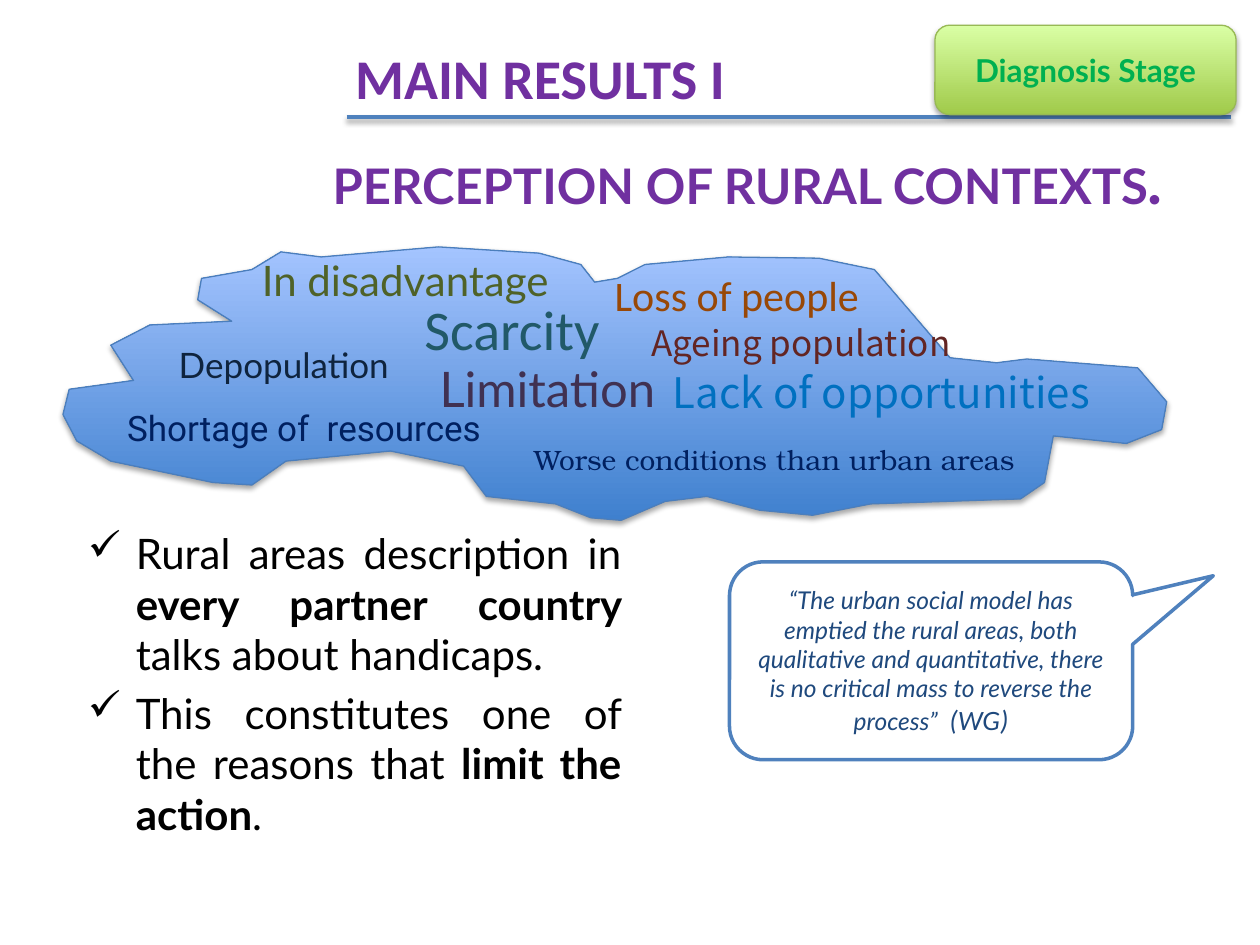
"""Build the rural perception slide with its word cloud, findings and quotation."""
from dataclasses import dataclass, field
from typing import Any

from lxml import etree
from pptx import Presentation
from pptx.dml.color import RGBColor
from pptx.enum.shapes import MSO_CONNECTOR, MSO_SHAPE
from pptx.enum.text import MSO_ANCHOR, MSO_AUTO_SIZE, PP_ALIGN
from pptx.oxml.ns import qn
from pptx.util import Inches, Pt

LEFT, CENTER, JUSTIFY = PP_ALIGN.LEFT, PP_ALIGN.CENTER, PP_ALIGN.JUSTIFY
TOP, MIDDLE = MSO_ANCHOR.TOP, MSO_ANCHOR.MIDDLE
FIXED, GROW = MSO_AUTO_SIZE.NONE, MSO_AUTO_SIZE.SHAPE_TO_FIT_TEXT
ROUNDED, CALLOUT = MSO_SHAPE.ROUNDED_RECTANGLE, MSO_SHAPE.ROUNDED_RECTANGULAR_CALLOUT
STRAIGHT = MSO_CONNECTOR.STRAIGHT
TITLE_ONLY = 5


@dataclass(frozen=True)
class Theme:
    """Colours, fonts and type sizes of the slide."""
    purple: str = "7030A0"
    black: str = "000000"
    white: str = "FFFFFF"
    accent: str = "4F81BD"
    quote: str = "1F497D"
    stage: str = "00B050"
    stage_line: str = "98B955"
    stage_gradient: tuple[str, str] = ("A0CA4A", "DAFFA5")
    cloud_line: str = "4B7EBC"
    cloud_gradient: tuple[str, str] = ("3F80CE", "A4C4FF")
    teal: str = "215968"
    navy: str = "002060"
    plum: str = "403152"
    rust: str = "984807"
    maroon: str = "632523"
    midnight: str = "0F243E"
    sky: str = "0070C0"
    olive: str = "4F6228"
    lato: str = "Lato"
    calibri: str = "Calibri"
    roboto: str = "Roboto"
    noto: str = "Noto Sans CJK KR"
    bonum: str = "TeX Gyre Bonum"
    huge: int = 36
    heading: int = 32
    title: int = 28
    body: int = 24
    word: int = 20
    label: int = 18
    small: int = 16
    caption: int = 14


THEME = Theme()


@dataclass(frozen=True)
class Piece:
    """A stretch of text in one format."""
    text: str
    size: int
    colour: str
    font: str = THEME.lato
    format: dict[str, Any] = field(default_factory=dict)


@dataclass(frozen=True)
class Label:
    """A single-line text box."""
    box: tuple[float, float, float, float]
    piece: Piece


BOLD = {"bold": True}
ITALIC = {"italic": True}
LABELS = [
    Label((3.27, 2.29, 2.21, 0.64), Piece("Scarcity", THEME.heading, THEME.teal, THEME.calibri)),
    Label((4.14, 3.46, 5.04, 0.37),
          Piece("Worse conditions than urban areas", THEME.small, THEME.navy, THEME.bonum)),
    Label((0.91, 3.18, 4.21, 0.44),
          Piece("Shortage of  resources", THEME.word, THEME.navy, THEME.roboto)),
    Label((3.39, 2.8, 1.97, 0.57), Piece("Limitation", THEME.title, THEME.plum)),
    Label((4.78, 2.09, 2.7, 0.5), Piece("Loss of people", THEME.body, THEME.rust, THEME.calibri)),
    Label((5.07, 2.5, 3.17, 0.44), Piece("Ageing population", THEME.word, THEME.maroon, THEME.noto)),
    Label((1.32, 2.68, 2.99, 0.44), Piece("Depopulation", THEME.word, THEME.midnight)),
    Label((5.24, 2.86, 4.19, 0.5),
          Piece("Lack of opportunities", THEME.body, THEME.sky, THEME.noto)),
    Label((1.98, 1.97, 3.51, 0.5), Piece("In disadvantage", THEME.body, THEME.olive)),
    Label((2.72, 0.3, 3.31, 0.64),
          Piece("MAIN RESULTS I", THEME.heading, THEME.purple, THEME.calibri, BOLD)),
]
FINDINGS = [
    [("Rural areas description in ", {}), ("every partner country ", BOLD),
     ("talks about handicaps.", {})],
    [("This constitutes one of the reasons that ", {}), ("limit the action", BOLD), (".", {})],
]
CLOUD_HUNDREDTHS = [
    (200, 214), (223, 200), (255, 204), (348, 196), (428, 201), (461, 210), (472, 224),
    (490, 221), (512, 210), (578, 204), (650, 205), (694, 214), (712, 235), (754, 284),
    (791, 288), (815, 285), (903, 292), (926, 319), (922, 341), (894, 352), (836, 346),
    (829, 383), (810, 396), (691, 400), (645, 409), (603, 405), (561, 394), (528, 398),
    (493, 413), (469, 411), (441, 400), (386, 394), (368, 370), (310, 358), (227, 366),
    (200, 385), (169, 383), (88, 366), (61, 350), (50, 329), (55, 309), (106, 302),
    (88, 274), (119, 258), (184, 255), (157, 238), (160, 221),
]


def add_pieces(paragraph: Any, pieces: list[Piece], alignment: Any = LEFT) -> None:
    """Write formatted runs into a paragraph."""
    paragraph.alignment = alignment
    for piece in pieces:
        run = paragraph.add_run()
        run.text = piece.text
        values = {"name": piece.font, "size": Pt(piece.size), "bold": False, **piece.format}
        for name, value in values.items():
            setattr(run.font, name, value)
        run.font.color.rgb = RGBColor.from_string(piece.colour)


def format_frame(frame: Any, auto_size: Any = FIXED, anchor: Any = TOP) -> None:
    """Set wrapping, sizing and anchoring of a text frame."""
    values = {"word_wrap": True, "auto_size": auto_size, "vertical_anchor": anchor}
    for name, value in values.items():
        setattr(frame, name, value)


def set_line(shape: Any, colour: str, width: float) -> None:
    """Set the outline colour and width."""
    shape.line.color.rgb = RGBColor.from_string(colour)
    shape.line.width = Pt(width)


def set_gradient(shape: Any, colours: tuple[str, str]) -> None:
    """Fill a shape from bottom to top with two colours."""
    shape.fill.gradient()
    shape.fill.gradient_angle = 90
    for stop, colour in zip(shape.fill.gradient_stops, colours):
        stop.color.rgb = RGBColor.from_string(colour)


def add_shadow(shape: Any, distance: float, opacity: int) -> None:
    """Give a shape a soft shadow straight below it."""
    effects = etree.SubElement(shape._element.spPr, qn("a:effectLst"))
    shadow = etree.SubElement(effects, qn("a:outerShdw"), blurRad=str(Pt(3.1)),
                              dist=str(Pt(distance)), dir="5400000", rotWithShape="0")
    colour = etree.SubElement(shadow, qn("a:srgbClr"), val=THEME.black)
    etree.SubElement(colour, qn("a:alpha"), val=str(opacity * 1000))


def add_cloud(slide: Any) -> None:
    """Draw the cloud behind the words."""
    start, *others = CLOUD_HUNDREDTHS
    builder = slide.shapes.build_freeform(*start, scale=Inches(0.01))
    builder.add_line_segments(others, close=True)
    cloud = builder.convert_to_shape()
    set_gradient(cloud, THEME.cloud_gradient)
    set_line(cloud, THEME.cloud_line, 0.75)
    add_shadow(cloud, 1.8, 35)


def add_label(slide: Any, label: Label) -> None:
    """Add one text box."""
    frame = slide.shapes.add_textbox(*map(Inches, label.box)).text_frame
    format_frame(frame, GROW)
    add_pieces(frame.paragraphs[0], [label.piece])


def add_findings(slide: Any) -> None:
    """Add the list of findings with tick bullets."""
    frame = slide.shapes.add_textbox(*map(Inches, (0.6, 4.14, 4.43, 2.5))).text_frame
    format_frame(frame)
    for index, finding in enumerate(FINDINGS):
        paragraph = frame.add_paragraph() if index else frame.paragraphs[0]
        properties = paragraph._p.get_or_add_pPr()
        properties.set("marL", str(Inches(0.38)))
        properties.set("indent", str(Inches(-0.38)))
        etree.SubElement(properties, qn("a:buChar"), char="✓")
        if index:
            paragraph.space_before = Pt(4.8)
        add_pieces(paragraph, [Piece(text, THEME.body, THEME.black, format=style)
                               for text, style in finding], JUSTIFY)


def add_panel(slide: Any, kind: Any, box: tuple[float, ...], pieces: list[Piece]) -> Any:
    """Add a shape with centred text."""
    shape = slide.shapes.add_shape(kind, *map(Inches, box))
    format_frame(shape.text_frame, anchor=MIDDLE)
    add_pieces(shape.text_frame.paragraphs[0], pieces, CENTER)
    return shape


def main() -> None:
    """Build and save the presentation."""
    presentation = Presentation()
    presentation.slide_width, presentation.slide_height = Inches(10), Inches(7.5)
    slide = presentation.slides.add_slide(presentation.slide_layouts[TITLE_ONLY])
    add_cloud(slide)

    title = slide.shapes.title
    for name, value in zip(("left", "top", "width", "height"), (1.9, 1.07, 8.07, 1.02)):
        setattr(title, name, Inches(value))
    format_frame(title.text_frame)
    add_pieces(title.text_frame.paragraphs[0], [
        Piece("PERCEPTION OF RURAL CONTEXTS", THEME.title, THEME.purple, format=BOLD),
        Piece(".", THEME.huge, THEME.purple, format=BOLD)], CENTER)

    add_findings(slide)
    rule = slide.shapes.add_connector(STRAIGHT, *map(Inches, (2.75, 0.93, 9.77, 0.93)))
    set_line(rule, THEME.accent, 2)
    add_shadow(rule, 1.6, 38)
    for label in LABELS:
        add_label(slide, label)

    quote = add_panel(slide, CALLOUT, (5.79, 4.46, 3.2, 1.57), [
        Piece("“The urban social model has emptied the rural areas, both qualitative and "
              "quantitative, there is no critical mass to reverse the process”  ",
              THEME.caption, THEME.quote, format=ITALIC),
        Piece("(WG)", THEME.small, THEME.quote, THEME.calibri, ITALIC)])
    for index, value in enumerate((0.7, -0.43, 0.17)):
        quote.adjustments[index] = value
    quote.fill.solid()
    quote.fill.fore_color.rgb = RGBColor.from_string(THEME.white)
    set_line(quote, THEME.accent, 2)
    quote.shadow.inherit = False

    stage = add_panel(slide, ROUNDED, (7.42, 0.2, 2.39, 0.71), [
        Piece("Diagnosis Stage", THEME.label, THEME.stage, format=BOLD)])
    set_gradient(stage, THEME.stage_gradient)
    set_line(stage, THEME.stage_line, 0.75)
    add_shadow(stage, 1.8, 35)
    presentation.save("out.pptx")


if __name__ == "__main__":
    main()
